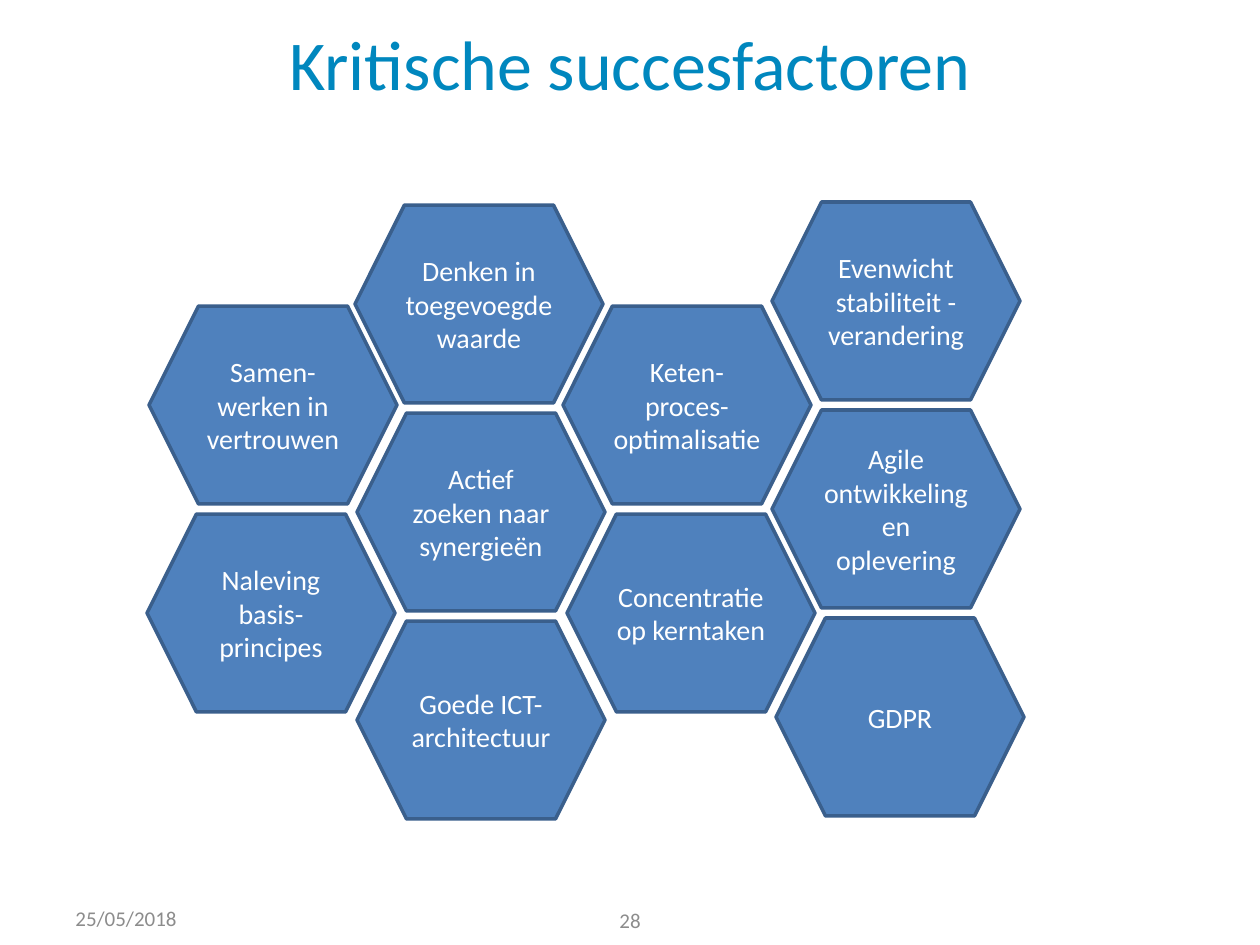
from dataclasses import dataclass

from pptx import Presentation
from pptx.dml.color import RGBColor
from pptx.enum.shapes import MSO_SHAPE
from pptx.enum.text import MSO_ANCHOR, PP_ALIGN
from pptx.slide import Slide
from pptx.text.text import TextFrame
from pptx.util import Emu, Pt

PX_PER_INCH = 126
FONT = "Calibri"
TITLE_BLUE = RGBColor(0x00, 0x87, 0xBE)
HEXAGON_BLUE = RGBColor(0x4F, 0x81, 0xBD)
OUTLINE_BLUE = RGBColor(0x3A, 0x5F, 0x8C)
FOOTER_GREY = RGBColor(0x8C, 0x8C, 0x8C)
WHITE = RGBColor(0xFF, 0xFF, 0xFF)

HEXAGON_WIDTH, HEXAGON_HEIGHT = 248, 198
ROW_PITCH = 208


@dataclass(frozen=True)
class Label:
    text: str
    left: int
    top: int
    width: int
    height: int
    size: int
    color: RGBColor
    align: PP_ALIGN


@dataclass(frozen=True)
class Column:
    top: int
    factors: tuple[tuple[int, str], ...]  # left edge and wording, downwards


LABELS = (
    Label("Kritische succesfactoren", 63, 19, 1134, 87, 40, TITLE_BLUE, PP_ALIGN.CENTER),
    Label("25/05/2018", 63, 891, 294, 54, 12, FOOTER_GREY, PP_ALIGN.LEFT),
    Label("28", 483, 895, 294, 50, 12, FOOTER_GREY, PP_ALIGN.CENTER),
)

COLUMNS = (
    Column(306, ((149, "Samen-werken in vertrouwen"),
                 (147, "Naleving basis-principes"))),
    Column(205, ((355, "Denken in toegevoegde waarde"),
                 (357, "Actief zoeken naar synergieën"),
                 (357, "Goede ICT-architectuur"))),
    Column(306, ((563, "Keten-proces-optimalisatie"),
                 (567, "Concentratie op kerntaken"))),
    Column(202, ((772, "Evenwicht stabiliteit - verandering"),
                 (772, "Agile ontwikkeling en oplevering"),
                 (776, "GDPR"))),
)


def px(length: int) -> Emu:
    return Emu(round(length * 914400 / PX_PER_INCH))


def write(frame: TextFrame, text: str, size: int, color: RGBColor, align: PP_ALIGN) -> None:
    frame.text = text
    frame.word_wrap = True
    frame.vertical_anchor = MSO_ANCHOR.MIDDLE
    para = frame.paragraphs[0]
    para.alignment = align
    font = para.runs[0].font
    font.name = FONT
    font.size = Pt(size)
    font.color.rgb = color


def add_label(page: Slide, label: Label) -> None:
    box = page.shapes.add_textbox(
        px(label.left), px(label.top), px(label.width), px(label.height))
    write(box.text_frame, label.text, label.size, label.color, label.align)


def add_hexagon(page: Slide, left: int, top: int, text: str) -> None:
    hexagon = page.shapes.add_shape(
        MSO_SHAPE.HEXAGON, px(left), px(top), px(HEXAGON_WIDTH), px(HEXAGON_HEIGHT))
    hexagon.shadow.inherit = False
    hexagon.fill.solid()
    hexagon.fill.fore_color.rgb = HEXAGON_BLUE
    hexagon.line.color.rgb = OUTLINE_BLUE
    hexagon.line.width = Pt(2)
    write(hexagon.text_frame, text, 16, WHITE, PP_ALIGN.CENTER)


def main() -> None:
    deck = Presentation()
    deck.slide_width, deck.slide_height = px(1260), px(945)
    page = deck.slides.add_slide(deck.slide_layouts[6])

    # Title and footer
    for label in LABELS:
        add_label(page, label)

    # Honeycomb of success factors
    for column in COLUMNS:
        for row, (left, text) in enumerate(column.factors):
            add_hexagon(page, left, column.top + row * ROW_PITCH, text)

    deck.save("out.pptx")


if __name__ == "__main__":
    main()
